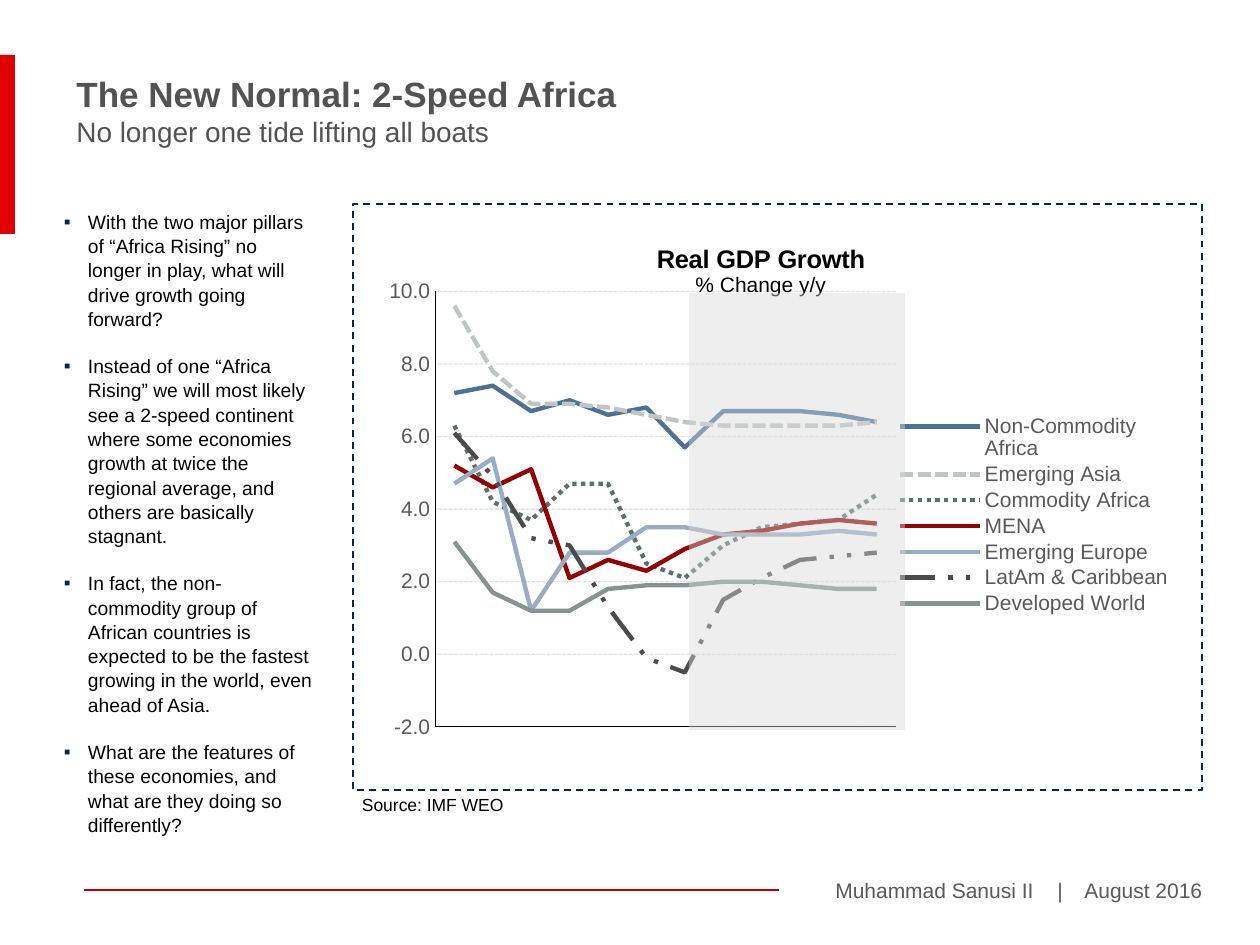
import pptx
import pptx.chart.data
import pptx.dml.color
import pptx.enum.chart
import pptx.enum.dml
import pptx.enum.shapes
import pptx.enum.text
import pptx.oxml
import pptx.oxml.ns
import pptx.util

EMU_PER_PX = 914400 / 126
FONT = "Arial"
COLORS = {
    "black": "000000", "title": "525252", "gray": "595959", "navy": "042556",
    "tab": "E20000", "rule": "C00000", "shade": "D9D9D9",
}
DASH = pptx.enum.dml.MSO_LINE
SERIES = [
    ("Non-Commodity Africa", "4D7194", None,
     (7.2, 7.4, 6.7, 7.0, 6.6, 6.8, 5.7, 6.7, 6.7, 6.7, 6.6, 6.4)),
    ("Emerging Asia", "BEC5C4", DASH.SQUARE_DOT,
     (9.6, 7.8, 6.9, 6.9, 6.8, 6.6, 6.4, 6.3, 6.3, 6.3, 6.3, 6.4)),
    ("Commodity Africa", "5D6F6C", DASH.ROUND_DOT,
     (6.3, 4.2, 3.7, 4.7, 4.7, 2.5, 2.1, 3.0, 3.5, 3.6, 3.7, 4.4)),
    ("MENA", "960000", None,
     (5.2, 4.6, 5.1, 2.1, 2.6, 2.3, 2.9, 3.3, 3.4, 3.6, 3.7, 3.6)),
    ("Emerging Europe", "99ADC2", None,
     (4.7, 5.4, 1.2, 2.8, 2.8, 3.5, 3.5, 3.3, 3.3, 3.3, 3.4, 3.3)),
    ("LatAm & Caribbean", "4B4B4B", DASH.DASH_DOT_DOT,
     (6.1, 4.9, 3.2, 3.0, 1.3, -0.1, -0.5, 1.5, 2.1, 2.6, 2.7, 2.8)),
    ("Developed World", "869391", None,
     (3.1, 1.7, 1.2, 1.2, 1.8, 1.9, 1.9, 2.0, 2.0, 1.9, 1.8, 1.8)),
]
BULLETS = [
    "With the two major pillars of “Africa Rising” no longer in play, what will "
    "drive growth going forward?",
    "Instead of one “Africa Rising” we will most likely see a 2-speed continent "
    "where some economies growth at twice the regional average, and others are "
    "basically stagnant.",
    "In fact, the non-commodity group of African countries is expected to be the "
    "fastest growing in the world, even ahead of Asia.",
    "What are the features of these economies, and what are they doing so differently?",
]


def px(*lengths):
    return [pptx.util.Emu(round(length * EMU_PER_PX)) for length in lengths]


def rgb(value):
    return pptx.dml.color.RGBColor.from_string(value)


def append_xml(parent, xml):
    """Append an element given as text, with the a: and c: prefixes declared."""
    tag, rest = xml.split(" ", 1)
    parent.append(pptx.oxml.parse_xml(f"{tag} {pptx.oxml.ns.nsdecls('a', 'c')} {rest}"))


def set_alpha(element, percent):
    for color in element.iter(pptx.oxml.ns.qn("a:srgbClr")):
        append_xml(color, f'<a:alpha val="{percent * 1000}"/>')


def style_font(font, size, color, bold=False):
    font.name, font.size, font.bold = FONT, pptx.util.Pt(size), bold
    font.color.rgb = rgb(color)


def style_line(line, color, width, dash=None):
    line.color.rgb = rgb(color)
    line.width = pptx.util.Pt(width)
    if dash is not None:
        line.dash_style = dash


def add_run(paragraph, text, size, color, bold=False):
    run = paragraph.add_run()
    run.text = text
    style_font(run.font, size, color, bold)


def add_text_box(slide, box):
    frame = slide.shapes.add_textbox(*px(*box)).text_frame
    frame.word_wrap = True
    return frame


def add_rectangle(slide, box, fill=None):
    shape = slide.shapes.add_shape(pptx.enum.shapes.MSO_SHAPE.RECTANGLE, *px(*box))
    shape.shadow.inherit = False
    shape.line.fill.background()
    if fill:
        shape.fill.solid()
        shape.fill.fore_color.rgb = rgb(fill)
    else:
        shape.fill.background()
    return shape


def add_header(slide, box):
    left, top, width, height = box
    add_rectangle(slide, (left - 64, top - 10, 15, 179), COLORS["tab"])
    frame = add_text_box(slide, box)
    frame.vertical_anchor = pptx.enum.text.MSO_ANCHOR.MIDDLE
    add_run(frame.paragraphs[0], "The New Normal: 2-Speed Africa", 20, COLORS["title"], True)
    add_run(frame.add_paragraph(), "No longer one tide lifting all boats", 16, COLORS["title"])


def add_footer(slide, box):
    left, top, width, height = box
    rule = slide.shapes.add_connector(
        pptx.enum.shapes.MSO_CONNECTOR.STRAIGHT,
        *px(left, top + 19, left + 695, top + 19))
    style_line(rule.line, COLORS["rule"], 1.5)
    append_xml(rule._element.spPr, "<a:effectLst />")
    frame = add_text_box(slide, (left + 739, top, width - 739, height))
    paragraph = frame.paragraphs[0]
    stops = "".join(f'<a:tab pos="{stop}" algn="l"/>' for stop in px(222, 249))
    append_xml(paragraph._p.get_or_add_pPr(), f"<a:tabLst >{stops}</a:tabLst>")
    add_run(paragraph, "Muhammad Sanusi II\t|\tAugust 2016", 12, COLORS["gray"])


def add_bullets(slide, box):
    frame = add_text_box(slide, box)
    frame.margin_left = frame.margin_right = frame.margin_top = frame.margin_bottom = 0
    indent = px(24)[0]
    for index, text in enumerate(BULLETS):
        paragraph = frame.add_paragraph() if index else frame.paragraphs[0]
        paragraph.line_spacing = 1.05
        paragraph.space_after = pptx.util.Pt(13.2)
        properties = paragraph._p.get_or_add_pPr()
        properties.set("marL", str(indent))
        properties.set("indent", str(-indent))
        append_xml(properties, f'<a:buClr ><a:srgbClr val="{COLORS["navy"]}"/></a:buClr>')
        append_xml(properties, f'<a:buFont typeface="{FONT}"/>')
        append_xml(properties, '<a:buChar char="▪"/>')
        add_run(paragraph, text, 11, COLORS["black"])


def set_layout(element, inner=False, **fractions):
    """Place a chart part by fractions (x, y, w, h) of the chart's size."""
    layout = element.find(pptx.oxml.ns.qn("c:layout"))
    if layout is None:
        layout = pptx.oxml.parse_xml(f"<c:layout {pptx.oxml.ns.nsdecls('c')}/>")
        overlay = element.find(pptx.oxml.ns.qn("c:overlay"))
        if overlay is None:
            element.insert(0, layout)
        else:
            overlay.addprevious(layout)
    target = '<c:layoutTarget val="inner"/>' if inner else ""
    modes = '<c:xMode val="edge"/><c:yMode val="edge"/>'
    values = "".join(f'<c:{key} val="{value}"/>' for key, value in fractions.items())
    append_xml(layout, f"<c:manualLayout >{target}{modes}{values}</c:manualLayout>")


def add_growth_chart(slide, box):
    data = pptx.chart.data.CategoryChartData(number_format="0.0")
    data.categories = [str(number) for number in range(1, 13)]
    for name, _, _, values in SERIES:
        data.add_series(name, values)
    chart = slide.shapes.add_chart(
        pptx.enum.chart.XL_CHART_TYPE.LINE, *px(*box), data).chart
    style_font(chart.font, 10, COLORS["black"])

    for series, (_, color, dash, _) in zip(chart.plots[0].series, SERIES):
        series.smooth = False
        series.marker.style = pptx.enum.chart.XL_MARKER_STYLE.NONE
        style_line(series.format.line, color, 2.5, dash)

    title = chart.chart_title.text_frame
    add_run(title.paragraphs[0], "Real GDP Growth", 14.5, COLORS["black"], True)
    add_run(title.add_paragraph(), "% Change y/y", 12, COLORS["black"])

    value_axis = chart.value_axis
    value_axis.minimum_scale, value_axis.maximum_scale, value_axis.major_unit = -2, 10, 2
    value_axis.crosses = pptx.enum.chart.XL_AXIS_CROSSES.MINIMUM
    value_axis.tick_labels.number_format = "0.0"
    value_axis.tick_labels.number_format_is_linked = False
    style_line(value_axis.major_gridlines.format.line, COLORS["black"], 0.75, DASH.SQUARE_DOT)
    for gridlines in chart._chartSpace.iter(pptx.oxml.ns.qn("c:majorGridlines")):
        set_alpha(gridlines, 11)
    for axis in (value_axis, chart.category_axis):
        axis.major_tick_mark = axis.minor_tick_mark = pptx.enum.chart.XL_TICK_MARK.NONE
        style_font(axis.tick_labels.font, 12, COLORS["gray"])
        style_line(axis.format.line, COLORS["black"], 0.75)
    chart.category_axis.tick_label_position = pptx.enum.chart.XL_TICK_LABEL_POSITION.NONE

    chart.has_legend = True
    chart.legend.position = pptx.enum.chart.XL_LEGEND_POSITION.LEFT
    chart.legend.include_in_layout = False
    style_font(chart.legend.font, 12, COLORS["gray"])
    set_layout(chart.chart_title._element, x=0.37, y=0.04)
    set_layout(chart.legend._element, x=0.66, y=0.34, w=0.33, h=0.36)
    set_layout(chart._chartSpace.chart.plotArea, inner=True, x=0.11, y=0.13, w=0.55, h=0.76)


def add_chart_panel(slide, box):
    left, top, width, height = box
    add_growth_chart(slide, (left - 10, top + 13, 838, 573))
    forecast = add_rectangle(slide, (left + 336, top + 89, 216, 437), COLORS["shade"])
    set_alpha(forecast._element.spPr, 43)
    frame = add_rectangle(slide, box)
    style_line(frame.line, COLORS["navy"], 1, DASH.DASH)
    source = add_text_box(slide, (left, top + height, 456, 30))
    source.margin_left, source.margin_top, source.margin_right, source.margin_bottom = px(9, 4, 9, 5)
    add_run(source.paragraphs[0], "Source: IMF WEO", 10, COLORS["black"])


def main():
    presentation = pptx.Presentation()
    presentation.slide_width, presentation.slide_height = px(1260, 945)
    slide = presentation.slides.add_slide(presentation.slide_layouts[6])
    add_footer(slide, (84, 871, 1132, 38))
    add_header(slide, (64, 65, 1091, 90))
    add_chart_panel(slide, (353, 204, 849, 586))
    add_bullets(slide, (64, 209, 251, 670))
    presentation.save("out.pptx")


if __name__ == "__main__":
    main()
